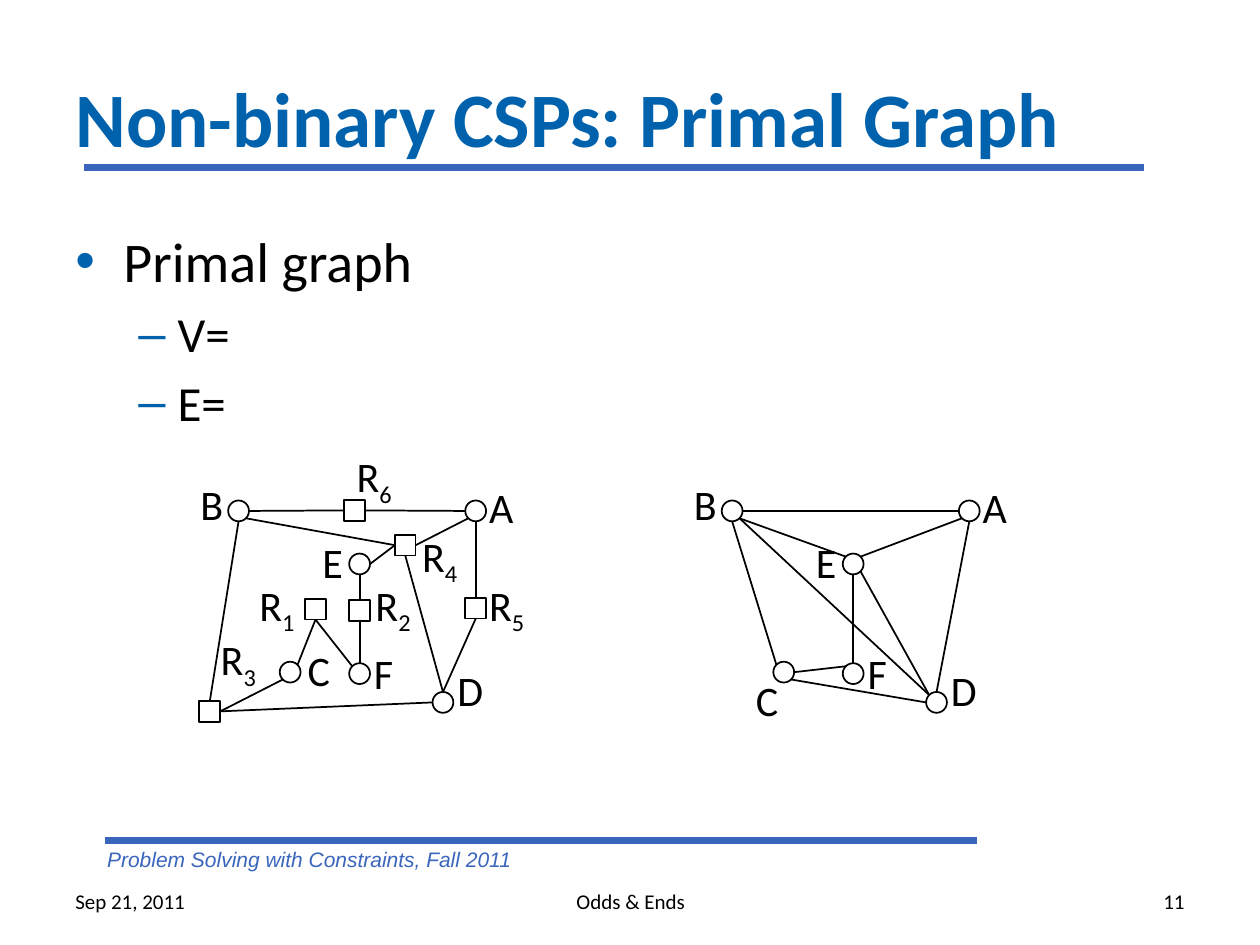
"""Build the slide on primal graphs of non-binary CSPs."""
from math import sqrt

from lxml.etree import SubElement
from pptx import Presentation
from pptx.dml.color import RGBColor
from pptx.enum.shapes import MSO_CONNECTOR as CONN, MSO_SHAPE as SHAPE
from pptx.enum.text import MSO_ANCHOR as ANCHOR, PP_ALIGN as ALIGN
from pptx.oxml.ns import qn
from pptx.util import Cm, Pt

TITLE_BLUE = RGBColor(0x00, 0x62, 0xAC)
RULE_BLUE = RGBColor(0x3A, 0x65, 0xBC)
BLACK = RGBColor(0, 0, 0)
WHITE = RGBColor(255, 255, 255)

RADIUS = 0.21
DIAG = 1 / sqrt(2)
SIDES = {
    "N": (0, -1), "S": (0, 1), "W": (-1, 0), "E": (1, 0),
    "NW": (-DIAG, -DIAG), "NE": (DIAG, -DIAG),
    "SW": (-DIAG, DIAG), "SE": (DIAG, DIAG),
}

VARIABLES = {
    "A": (9.59, 10.3), "B": (4.81, 10.3), "C": (5.85, 13.55),
    "D": (8.93, 14.16), "E": (7.25, 11.37), "F": (7.25, 13.58),
}
CONSTRAINTS = {
    "R1": (6.36, 12.28), "R2": (7.25, 12.31), "R3": (4.23, 14.34),
    "R4": (8.17, 10.99), "R5": (9.59, 12.26), "R6": (7.15, 10.29),
}
VARIABLE_LABELS = {
    "A": (9.86, 9.7, 0.74), "B": (4.04, 9.65, 0.61), "C": (6.2, 13, 0.53),
    "D": (9.22, 13.39, 0.64), "E": (6.5, 10.82, 0.64), "F": (7.54, 13.06, 0.48),
}
CONSTRAINT_LABELS = {
    "R1": (5.23, 11.68, 1.04), "R2": (7.57, 11.68, 1.35), "R3": (4.45, 12.78, 1.12),
    "R4": (8.51, 10.69, 1.09), "R5": (9.86, 11.68, 0.99), "R6": (7.19, 9.09, 1.12),
}
CONSTRAINT_EDGES = [
    "C SW R3 E", "B SE R4 W", "D N R5 S", "R4 E A SW", "E E R4 W",
    "R5 N A S", "D N R4 S", "R6 W B E", "B S R3 N", "C NE R1 S",
    "R1 S F NW", "R3 E D W", "A W R6 E", "R2 S F N", "R2 N E S",
]
PRIMAL_EDGES = [
    "B SE D NW", "B SE E NW", "D NW E SE", "E NE A SW", "D N A S",
    "A W B E", "B S C NW", "C E F NW", "C SE D W", "F N E S",
]


def add_text(shapes, box, text, size, color=BLACK, font="Calibri"):
    tb = shapes.add_textbox(*[Cm(v) for v in box])
    tf = tb.text_frame
    tf.text = text
    f = tf.paragraphs[0].runs[0].font
    f.name, f.size, f.color.rgb = font, Pt(size), color
    return tf


def add_line(shapes, start, end, color=BLACK, width=1):
    line = shapes.add_connector(CONN.STRAIGHT, *[Cm(v) for v in (*start, *end)])
    line.line.color.rgb = color
    line.line.width = Pt(width)
    SubElement(line._element.spPr, qn("a:effectLst"))


prs = Presentation()
prs.slide_width, prs.slide_height = Cm(25.4), Cm(19.05)
s = prs.slides.add_slide(prs.slide_layouts[6])

tf = add_text(s.shapes, (1.91, 16.94, 13.34, 0.76),
              "Problem Solving with Constraints, Fall 2011", 12, RULE_BLUE, "Arial")
tf.paragraphs[0].runs[0].font.italic = True
add_line(s.shapes, (1.69, 3.38), (23.06, 3.38), RULE_BLUE, 4)
add_line(s.shapes, (2.11, 16.94), (19.69, 16.94), RULE_BLUE, 4)

tf = add_text(s.shapes, (1.27, 0.76, 22.86, 3.18),
              "Non-binary CSPs: Primal Graph", 44, TITLE_BLUE)
tf.word_wrap = True
tf.vertical_anchor = ANCHOR.MIDDLE
tf.paragraphs[0].runs[0].font.bold = True

tf = add_text(s.shapes, (1.27, 4.45, 22.86, 12.57), "Primal graph", 32)
tf.word_wrap = True
for text in ("V=", "E="):
    p = tf.add_paragraph()
    p.text = text
    p.level = 1
    p.space_before = Pt(5.6)
    f = p.runs[0].font
    f.name, f.size, f.color.rgb = "Calibri", Pt(28), BLACK
for p in tf.paragraphs:
    margin, hang, bullet = (2.06, 0.79, "–") if p.level else (0.97, 0.97, "•")
    pPr = p._p.get_or_add_pPr()
    pPr.set("marL", str(Cm(margin)))
    pPr.set("indent", str(-Cm(hang)))
    bu_color = SubElement(pPr, qn("a:buClr"))
    SubElement(bu_color, qn("a:srgbClr"), val=str(TITLE_BLUE))
    SubElement(pPr, qn("a:buFont"), typeface="Arial")
    SubElement(pPr, qn("a:buChar"), char=bullet)

for left, width, text, align in (
    (1.27, 5.92, "Sep 21, 2011", ALIGN.LEFT),
    (8.69, 8.05, "Odds & Ends", ALIGN.CENTER),
    (18.21, 5.92, "11", ALIGN.RIGHT),
):
    tf = add_text(s.shapes, (left, 17.65, width, 1.02), text, 12)
    tf.word_wrap = True
    tf.vertical_anchor = ANCHOR.MIDDLE
    tf.paragraphs[0].alignment = align

constraint_graph = (0, VARIABLES | CONSTRAINTS, VARIABLE_LABELS | CONSTRAINT_LABELS,
                    CONSTRAINT_EDGES)
primal_graph = (9.95, VARIABLES, VARIABLE_LABELS | {"C": (5.29, 13.59, 0.53)},
                PRIMAL_EDGES)
for shift, nodes, labels, edges in (constraint_graph, primal_graph):
    shapes = s.shapes.add_group_shape().shapes
    for edge in edges:
        a, a_side, b, b_side = edge.split()
        start, end = [
            (nodes[n][0] + shift + RADIUS * SIDES[side][0],
             nodes[n][1] + RADIUS * SIDES[side][1])
            for n, side in ((a, a_side), (b, b_side))
        ]
        add_line(shapes, start, end)
    for name, (x, y) in nodes.items():
        kind = SHAPE.OVAL if name in VARIABLES else SHAPE.RECTANGLE
        sp = shapes.add_shape(kind, Cm(x + shift - RADIUS), Cm(y - RADIUS),
                              Cm(2 * RADIUS), Cm(2 * RADIUS))
        sp.shadow.inherit = False
        sp.fill.solid()
        sp.fill.fore_color.rgb = WHITE
        sp.line.color.rgb = BLACK
        sp.line.width = Pt(1)
    for name, (x, y, width) in labels.items():
        tf = add_text(shapes, (x + shift, y, width, 1.02), name[0], 24)
        tf.margin_left = tf.margin_right = tf.margin_top = tf.margin_bottom = 0
        if name in CONSTRAINTS:
            r = tf.paragraphs[0].add_run()
            r.text = name[1]
            r.font.name, r.font.size, r.font.color.rgb = "Calibri", Pt(24), BLACK
            r._r.get_or_add_rPr().set("baseline", "-25000")

prs.save("out.pptx")
